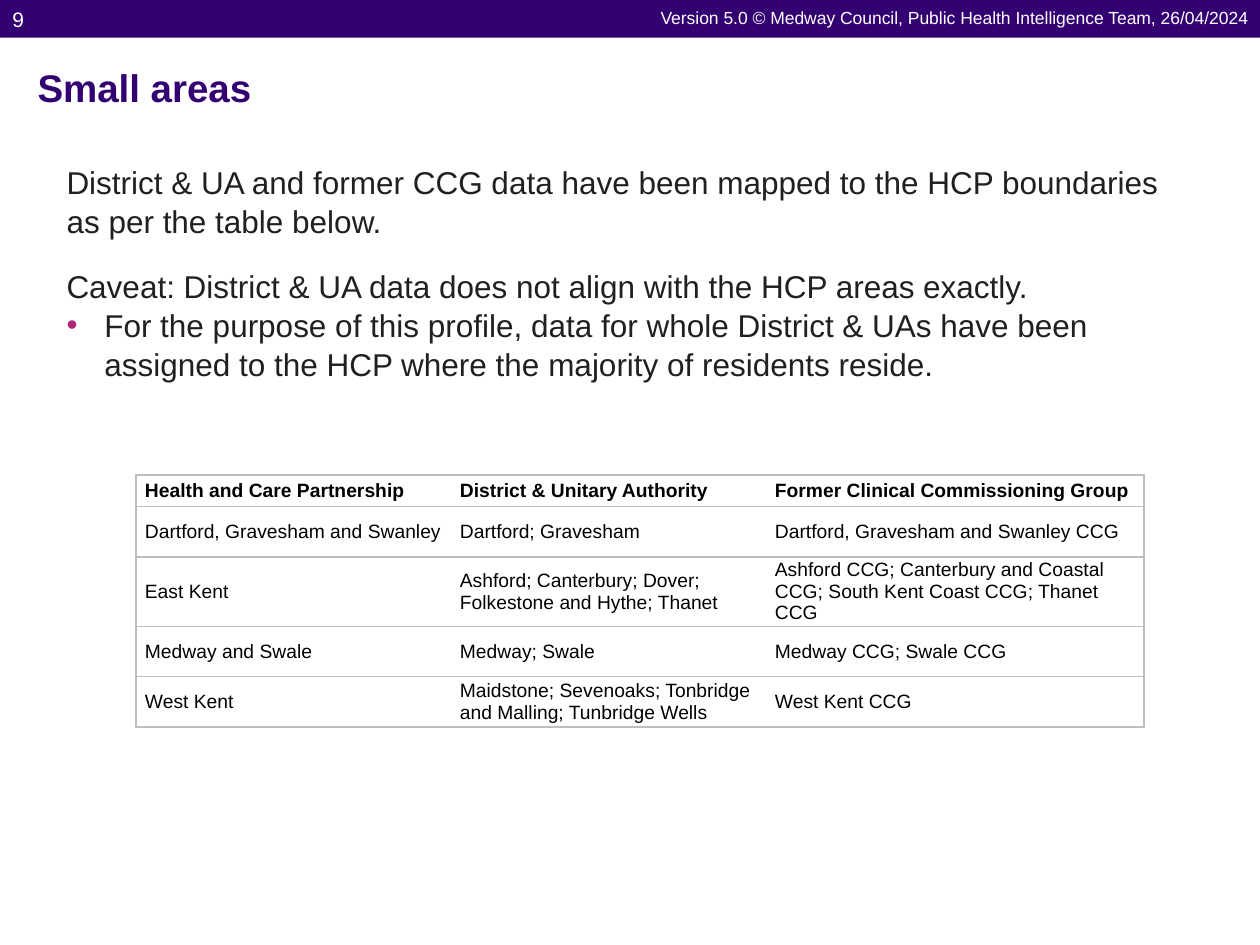
from dataclasses import dataclass

from lxml import etree
from pptx import Presentation
from pptx.dml.color import RGBColor
from pptx.enum.shapes import MSO_SHAPE
from pptx.enum.text import MSO_ANCHOR, PP_ALIGN
from pptx.oxml.ns import qn
from pptx.util import Inches, Pt

RECT = MSO_SHAPE.RECTANGLE
TOP, MIDDLE = MSO_ANCHOR.TOP, MSO_ANCHOR.MIDDLE
LEFT, RIGHT = PP_ALIGN.LEFT, PP_ALIGN.RIGHT


@dataclass(frozen=True)
class Theme:
    font: str = "Arial"
    purple: str = "330072"
    pink: str = "AE2573"
    ink: str = "231F20"
    black: str = "000000"
    white: str = "FFFFFF"
    grey: str = "BEBEBE"
    title: int = 22
    body: int = 18
    number: int = 12
    cell: int = 11
    header: int = 10


THEME = Theme()


@dataclass(frozen=True)
class Para:
    text: str
    after: float = 0
    bullet: bool = False


@dataclass(frozen=True)
class Box:
    left: float
    top: float
    width: float
    height: float
    paras: tuple[Para, ...]
    size: int
    color: str
    bold: bool = False
    align: PP_ALIGN = LEFT
    anchor: MSO_ANCHOR = TOP
    pitch: float = 1.0


BOXES = (
    Box(0.2, 0.47, 9.61, 0.45, (Para("Small areas"),),
        THEME.title, THEME.purple, bold=True, anchor=MIDDLE),
    Box(0, 0, 0.63, 0.63, (Para("9"),), THEME.number, THEME.white),
    Box(2.8, 0, 7.2, 0.28,
        (Para("Version 5.0 © Medway Council, Public Health Intelligence Team, "
              "26/04/2024"),),
        THEME.header, THEME.white, align=RIGHT, anchor=MIDDLE),
    Box(0.43, 1.23, 9.13, 2.2, (
        Para("District & UA and former CCG data have been mapped to the HCP "
             "boundaries as per the table below.", after=14.5),
        Para("Caveat: District & UA data does not align with the HCP areas "
             "exactly."),
        Para("For the purpose of this profile, data for whole District & UAs "
             "have been assigned to the HCP where the majority of residents "
             "reside.", bullet=True),
    ), THEME.body, THEME.ink, pitch=1.04),
)

COLS = (2.5, 2.5, 3)
HEAD_ROW, BODY_ROW = 0.25, 0.4
ROWS = (
    ("Health and Care Partnership", "District & Unitary Authority",
     "Former Clinical Commissioning Group"),
    ("Dartford, Gravesham and Swanley", "Dartford; Gravesham",
     "Dartford, Gravesham and Swanley CCG"),
    ("East Kent", "Ashford; Canterbury; Dover; Folkestone and Hythe; Thanet",
     "Ashford CCG; Canterbury and Coastal CCG; South Kent Coast CCG; "
     "Thanet CCG"),
    ("Medway and Swale", "Medway; Swale", "Medway CCG; Swale CCG"),
    ("West Kent",
     "Maidstone; Sevenoaks; Tonbridge and Malling; Tunbridge Wells",
     "West Kent CCG"),
)


def add_run(para, text: str, size: int, color: str, bold: bool) -> None:
    run = para.add_run()
    run.text = text
    run.font.name = THEME.font
    run.font.size = Pt(size)
    run.font.bold = bold
    run.font.color.rgb = RGBColor.from_string(color)


def add_bullet(para) -> None:
    props = para._p.get_or_add_pPr()
    props.set("marL", str(Inches(0.3)))
    props.set("indent", str(Inches(-0.3)))
    tint = etree.SubElement(props, qn("a:buClr"))
    etree.SubElement(tint, qn("a:srgbClr"), val=THEME.pink)
    etree.SubElement(props, qn("a:buFont"), typeface=THEME.font)
    etree.SubElement(props, qn("a:buChar"), char="•")


def add_box(slide, box: Box) -> None:
    shape = slide.shapes.add_textbox(Inches(box.left), Inches(box.top),
                                     Inches(box.width), Inches(box.height))
    frame = shape.text_frame
    frame.word_wrap = True
    frame.vertical_anchor = box.anchor
    for i, item in enumerate(box.paras):
        para = frame.add_paragraph() if i else frame.paragraphs[0]
        para.alignment = box.align
        para.line_spacing = box.pitch
        para.space_after = Pt(item.after)
        if item.bullet:
            add_bullet(para)
        add_run(para, item.text, box.size, box.color, box.bold)


def set_edges(cell, shown: str) -> None:
    """Draw a grey line on each shown side (L, R, T, B), none elsewhere."""
    props = cell._tc.get_or_add_tcPr()
    for i, side in enumerate("LRTB"):
        line = etree.Element(qn(f"a:ln{side}"), w=str(Pt(1)))
        if side in shown:
            fill = etree.SubElement(line, qn("a:solidFill"))
            etree.SubElement(fill, qn("a:srgbClr"), val=THEME.grey)
        else:
            etree.SubElement(line, qn("a:noFill"))
        props.insert(i, line)


def fill_cell(cell, text: str, bold: bool, edges: str) -> None:
    cell.fill.background()
    cell.vertical_anchor = MIDDLE
    cell.margin_left = cell.margin_right = Inches(0)
    cell.margin_top = cell.margin_bottom = Inches(0)
    para = cell.text_frame.paragraphs[0]
    para.space_before = para.space_after = Pt(5)
    para._p.get_or_add_pPr().set("marL", str(Inches(0.07)))
    add_run(para, text, THEME.cell, THEME.black, bold)
    set_edges(cell, edges)


def add_grid(slide) -> None:
    frame = slide.shapes.add_table(len(ROWS), len(COLS), Inches(1.08),
                                   Inches(3.77), Inches(sum(COLS)), Inches(2))
    table = frame.table
    table.first_row = table.horz_banding = False
    for col, width in zip(table.columns, COLS):
        col.width = Inches(width)
    last = len(COLS) - 1
    for r, texts in enumerate(ROWS):
        table.rows[r].height = Inches(BODY_ROW if r else HEAD_ROW)
        for c, text in enumerate(texts):
            edges = "TB" + ("L" if c == 0 else "") + ("R" if c == last else "")
            fill_cell(table.cell(r, c), text, r == 0, edges)


def main() -> None:
    deck = Presentation()
    deck.slide_width, deck.slide_height = Inches(10), Inches(7.5)
    slide = deck.slides.add_slide(deck.slide_layouts[6])

    # Top band
    band = slide.shapes.add_shape(RECT, 0, 0, deck.slide_width, Inches(0.3))
    band.shadow.inherit = False
    band.fill.solid()
    band.fill.fore_color.rgb = RGBColor.from_string(THEME.purple)
    band.line.fill.background()

    # Title, page number, header and body text
    for box in BOXES:
        add_box(slide, box)

    # Table of areas
    add_grid(slide)
    deck.save("out.pptx")


if __name__ == "__main__":
    main()
